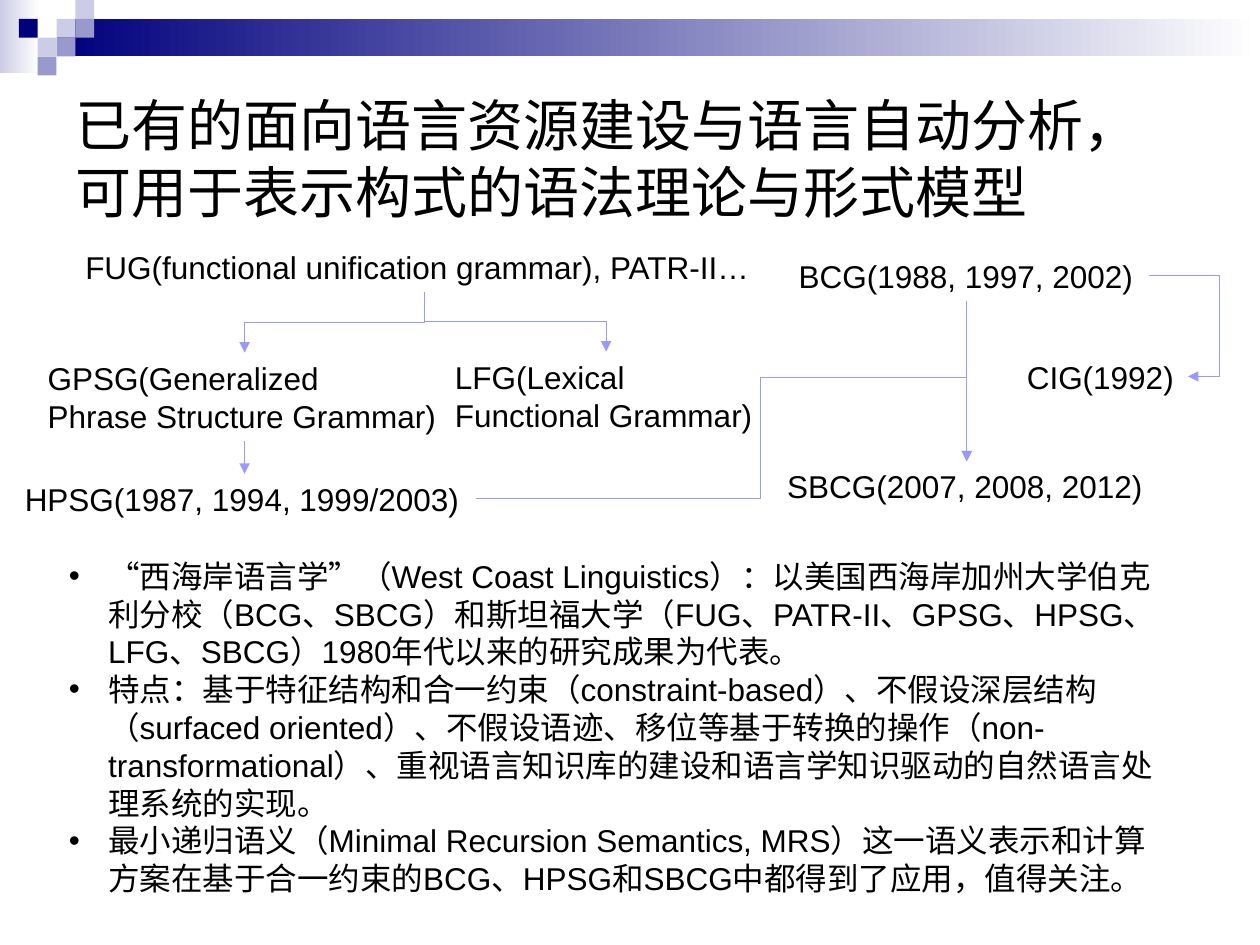
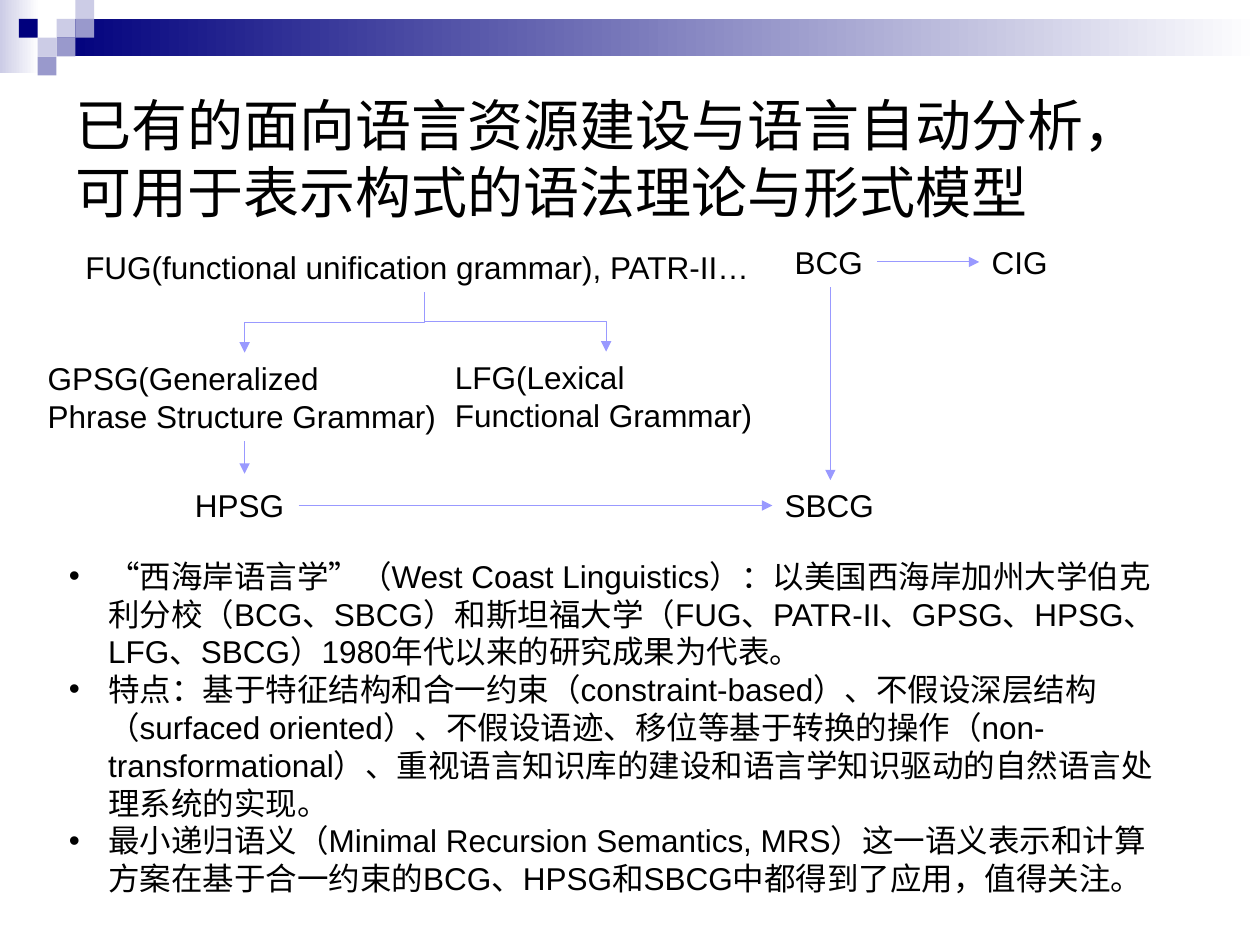
"""Build two slides that chart constraint-based grammar theories."""
from dataclasses import dataclass

from lxml import etree
from pptx import Presentation
from pptx.dml.color import RGBColor
from pptx.enum.lang import MSO_LANGUAGE_ID
from pptx.enum.shapes import MSO_CONNECTOR, MSO_SHAPE
from pptx.enum.text import MSO_ANCHOR, MSO_AUTO_SIZE
from pptx.oxml.ns import qn
from pptx.slide import Slide
from pptx.util import Cm, Pt

RECT = MSO_SHAPE.RECTANGLE
STRAIGHT, ELBOW = MSO_CONNECTOR.STRAIGHT, MSO_CONNECTOR.ELBOW
MIDDLE, TOP = MSO_ANCHOR.MIDDLE, MSO_ANCHOR.TOP
FIT, FIXED = MSO_AUTO_SIZE.SHAPE_TO_FIT_TEXT, MSO_AUTO_SIZE.NONE
CHINESE = MSO_LANGUAGE_ID.SIMPLIFIED_CHINESE

FONT = "Arial"
BLACK, WHITE, NAVY = "000000", "FFFFFF", "00007D"
PALE, LILAC, ARROW = "CCCCE6", "9999CC", "9999FF"
CELL = 0.38
INDENT = 0.79

TITLE = "已有的面向语言资源建设与语言自动分析，可用于表示构式的语法理论与形式模型"
POINTS = [
    "“西海岸语言学”（West Coast Linguistics）：以美国西海岸加州大学伯克利分校"
    "（BCG、SBCG）和斯坦福大学（FUG、PATR-II、GPSG、HPSG、LFG、SBCG）"
    "1980年代以来的研究成果为代表。",
    "特点：基于特征结构和合一约束（constraint-based）、不假设深层结构"
    "（surfaced oriented）、不假设语迹、移位等基于转换的操作"
    "（non-transformational）、重视语言知识库的建设和语言学知识驱动的"
    "自然语言处理系统的实现。",
    "最小递归语义（Minimal Recursion Semantics, MRS）这一语义表示和计算方案"
    "在基于合一约束的BCG、HPSG和SBCG中都得到了应用，值得关注。",
]


@dataclass(frozen=True)
class Block:
    """A filled rectangle in centimetres; a second colour makes a gradient."""
    left: float
    top: float
    width: float
    height: float
    color: str
    fade_to: str = ""


@dataclass(frozen=True)
class Grammar:
    """The label of one grammar theory."""
    text: str
    left: float
    top: float
    width: float
    height: float = 1.02


@dataclass(frozen=True)
class Arrow:
    """An arrow between two points; downward elbows leave vertically."""
    x1: float
    y1: float
    x2: float
    y2: float
    downward: bool = False
    bends: tuple[float, ...] = ()


MOSAIC = [(1, 1, NAVY), (3, 1, PALE), (4, 0, PALE), (4, 1, LILAC),
          (2, 2, PALE), (3, 2, LILAC), (2, 3, LILAC)]
HEADER = [
    Block(0, 0, 0.79, 1.47, PALE, WHITE),
    Block(3 * CELL, CELL, 24.26, 2 * CELL, NAVY, WHITE),
    *(Block(col * CELL, row * CELL, CELL, CELL, color) for col, row, color in MOSAIC),
]

SHARED_GRAMMARS = [
    Grammar("FUG(functional unification grammar), PATR-II…", 1.47, 4.88, 14.17),
    Grammar("GPSG(Generalized\nPhrase Structure Grammar)", 0.71, 7.11, 8.43, 1.8),
    Grammar("LFG(Lexical\nFunctional Grammar)", 8.92, 7.09, 6.58, 1.8),
]
SHARED_ARROWS = [
    Arrow(8.56, 5.89, 12.22, 7.09, downward=True),
    Arrow(8.56, 5.89, 4.93, 7.11, downward=True),
    Arrow(4.93, 8.89, 4.93, 9.55),
]
DATED = (
    [Grammar("BCG(1988, 1997, 2002)", 15.85, 5.05, 7.32),
     Grammar("SBCG(2007, 2008, 2012)", 15.62, 9.3, 7.75),
     Grammar("CIG(1992)", 20.45, 7.09, 3.51),
     Grammar("HPSG(1987, 1994, 1999/2003)", 0.25, 9.55, 9.35)],
    [Arrow(19.49, 6.07, 19.49, 9.3),
     Arrow(9.6, 10.06, 19.49, 9.3, bends=(0.58, 3.23)),
     Arrow(23.16, 5.56, 23.95, 7.59, bends=(1.8,))],
)
UNDATED = (
    [Grammar("BCG", 15.77, 4.78, 1.91), Grammar("SBCG", 15.57, 9.68, 2.34),
     Grammar("CIG", 19.74, 4.78, 1.65), Grammar("HPSG", 3.68, 9.68, 2.34)],
    [Arrow(16.74, 5.79, 16.74, 9.68),
     Arrow(6.02, 10.19, 15.57, 10.19),
     Arrow(17.68, 5.28, 19.74, 5.28)],
)


def rgb(color: str) -> RGBColor:
    """Turn a hex string into a colour."""
    return RGBColor.from_string(color)


def draw_block(s: Slide, block: Block) -> None:
    """Draw one rectangle of the header."""
    sp = s.shapes.add_shape(RECT, Cm(block.left), Cm(block.top),
                            Cm(block.width), Cm(block.height))
    sp.shadow.inherit = False
    sp.line.fill.background()
    if block.fade_to:
        sp.fill.gradient()
        sp.fill.gradient_angle = 0
        for stop, color in zip(sp.fill.gradient_stops, (block.color, block.fade_to)):
            stop.color.rgb = rgb(color)
    else:
        sp.fill.solid()
        sp.fill.fore_color.rgb = rgb(block.color)


def draw_text(s: Slide, text: str, box: tuple[float, float, float, float],
              size: float = 18, wrap: bool = True, anchor: MSO_ANCHOR = TOP,
              fit: MSO_AUTO_SIZE = FIT, bullets: bool = False) -> None:
    """Draw a text box with one paragraph for each line of text."""
    tf = s.shapes.add_textbox(*map(Cm, box)).text_frame
    tf.word_wrap, tf.auto_size, tf.vertical_anchor = wrap, fit, anchor
    tf.text = text
    for p in tf.paragraphs:
        if bullets:
            add_bullet(p._p.get_or_add_pPr())
        for r in p.runs:
            r.font.name, r.font.size = FONT, Pt(size)
            r.font.color.rgb = rgb(BLACK)
            r.font.language_id = CHINESE


def add_bullet(properties: etree._Element) -> None:
    """Give a paragraph a hanging round bullet."""
    properties.set("marL", str(Cm(INDENT)))
    properties.set("indent", str(-Cm(INDENT)))
    etree.SubElement(properties, qn("a:buFont"), typeface=FONT)
    etree.SubElement(properties, qn("a:buChar"), char="•")


def draw_arrow(s: Slide, arrow: Arrow) -> None:
    """Draw a straight or bent connector with an arrowhead at its end."""
    x1, y1, x2, y2 = arrow.x1, arrow.y1, arrow.x2, arrow.y2
    kind = STRAIGHT if x1 == x2 or y1 == y2 else ELBOW
    if arrow.downward:
        cx, cy, dx, dy = (x1 + x2) / 2, (y1 + y2) / 2, x2 - x1, y2 - y1
        x1, y1, x2, y2 = cx - dy / 2, cy + dx / 2, cx + dy / 2, cy - dx / 2
    c = s.shapes.add_connector(kind, Cm(x1), Cm(y1), Cm(x2), Cm(y2))
    c.line.color.rgb, c.line.width = rgb(ARROW), Pt(0.5)
    properties = c.element.spPr
    if arrow.downward:
        properties.find(qn("a:xfrm")).set("rot", "5400000")
    if arrow.bends:
        geometry = properties.find(qn("a:prstGeom"))
        geometry.set("prst", f"bentConnector{len(arrow.bends) + 2}")
        for number, bend in enumerate(arrow.bends, 1):
            etree.SubElement(geometry.find(qn("a:avLst")), qn("a:gd"),
                             name=f"adj{number}", fmla=f"val {round(bend * 100000)}")
    etree.SubElement(properties.find(qn("a:ln")), qn("a:tailEnd"), type="triangle")
    etree.SubElement(properties, qn("a:effectLst"))


def draw_slide(s: Slide, grammars: list[Grammar], arrows: list[Arrow]) -> None:
    """Draw the shared parts of a slide and its own grammars and arrows."""
    for block in HEADER:
        draw_block(s, block)
    draw_text(s, TITLE, (1.27, 1.27, 22.86, 3.81), size=32, anchor=MIDDLE, fit=FIXED)
    for g in SHARED_GRAMMARS + grammars:
        draw_text(s, g.text, (g.left, g.top, g.width, g.height), wrap=False)
    draw_text(s, "\n".join(POINTS), (1.14, 11.1, 22.81, 7.19), bullets=True)
    for arrow in SHARED_ARROWS + arrows:
        draw_arrow(s, arrow)


def main() -> None:
    """Build and save the presentation."""
    prs = Presentation()
    prs.slide_width, prs.slide_height = Cm(25.4), Cm(19.05)
    for grammars, arrows in (DATED, UNDATED):
        draw_slide(prs.slides.add_slide(prs.slide_layouts[6]), grammars, arrows)
    prs.save("out.pptx")


if __name__ == "__main__":
    main()
